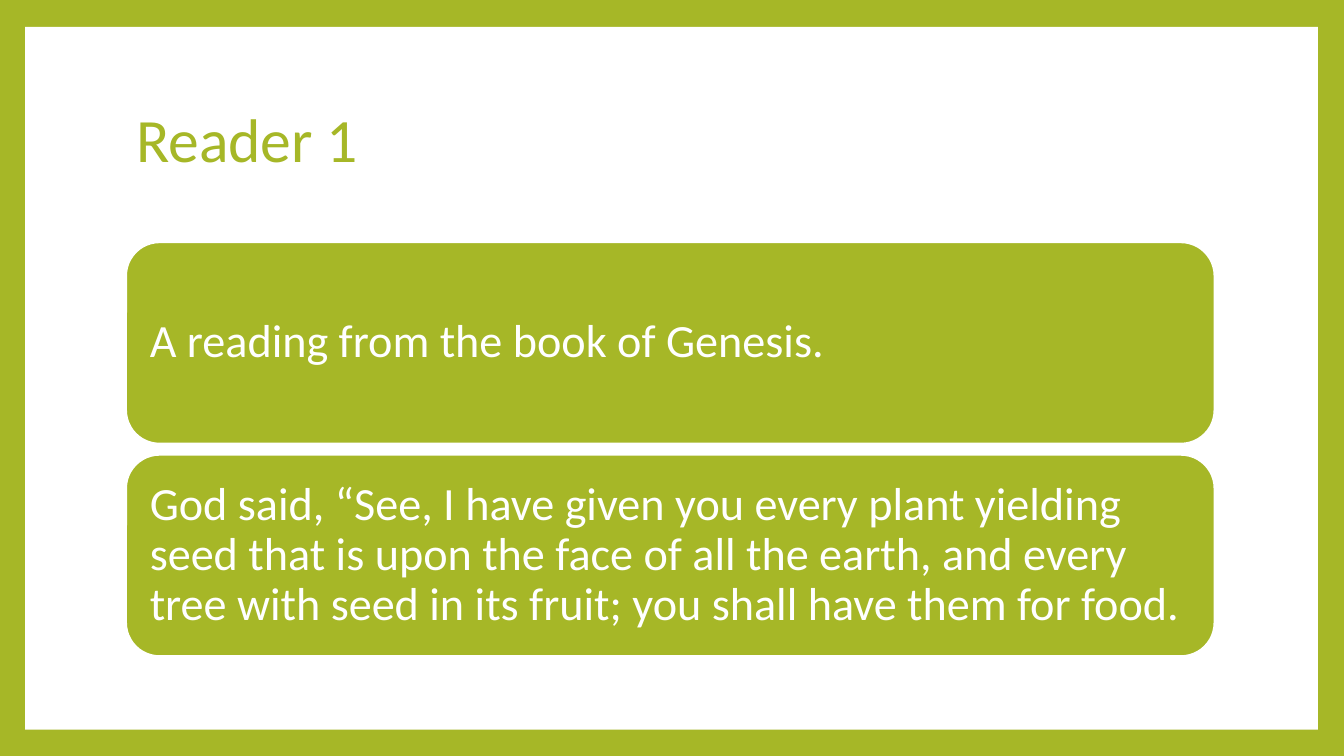
from pptx import Presentation
from pptx.dml.color import RGBColor
from pptx.enum.shapes import MSO_SHAPE
from pptx.enum.text import MSO_ANCHOR, MSO_AUTO_SIZE, PP_ALIGN
from pptx.util import Pt

RECTANGLE = MSO_SHAPE.RECTANGLE
ROUNDED = MSO_SHAPE.ROUNDED_RECTANGLE
MIDDLE = MSO_ANCHOR.MIDDLE
NO_FIT = MSO_AUTO_SIZE.NONE
LEFT = PP_ALIGN.LEFT

GREEN = RGBColor(0xA6, 0xB7, 0x27)
WHITE = RGBColor(0xFF, 0xFF, 0xFF)

TITLE_ONLY = 5
MARGIN = 90
CONTENT_WIDTH = 777.6
CARD_TOP = 173
CARD_HEIGHT = 144
CARD_STEP = 151.8

READINGS = [
    "A reading from the book of Genesis.",
    "God said, “See, I have given you every plant yielding seed that is upon "
    "the face of all the earth, and every tree with seed in its fruit; "
    "you shall have them for food.",
]


def write_text(shape, text, *, size, color, inset=None):
    frame = shape.text_frame
    frame.word_wrap = True
    frame.auto_size = NO_FIT
    frame.vertical_anchor = MIDDLE
    if inset is not None:
        frame.margin_left = frame.margin_right = Pt(inset)
        frame.margin_top = frame.margin_bottom = Pt(inset)
    para = frame.paragraphs[0]
    para.alignment = LEFT
    para.line_spacing = 0.9
    span = para.add_run()
    span.text = text
    span.font.name = "Calibri"
    span.font.size = Pt(size)
    span.font.color.rgb = color


def add_box(page, kind, left, top, width, height, fill):
    box = page.shapes.add_shape(kind, Pt(left), Pt(top), Pt(width), Pt(height))
    box.shadow.inherit = False
    box.fill.solid()
    box.fill.fore_color.rgb = fill
    box.line.fill.background()
    return box


def add_title(page, text):
    title = page.shapes.title
    title.left, title.top = Pt(MARGIN), Pt(48.24)
    title.width, title.height = Pt(CONTENT_WIDTH), Pt(106.56)
    write_text(title, text, size=44, color=GREEN)
    return title


def add_card(page, top, text):
    card = add_box(page, ROUNDED, MARGIN, top, CONTENT_WIDTH, CARD_HEIGHT, GREEN)
    card.line.color.rgb = WHITE
    card.line.width = Pt(1.5)
    write_text(card, text, size=33, color=WHITE, inset=10)


def main():
    deck = Presentation()
    deck.slide_width, deck.slide_height = Pt(960), Pt(540)
    page = deck.slides.add_slide(deck.slide_layouts[TITLE_ONLY])
    page.background.fill.solid()
    page.background.fill.fore_color.rgb = GREEN

    title = add_title(page, "Reader 1")
    panel = add_box(page, RECTANGLE, 18, 19.2, 923.4, 502, WHITE)
    title.element.addprevious(panel.element)

    for index, reading in enumerate(READINGS):
        add_card(page, CARD_TOP + index * CARD_STEP, reading)

    deck.save("out.pptx")


if __name__ == "__main__":
    main()
